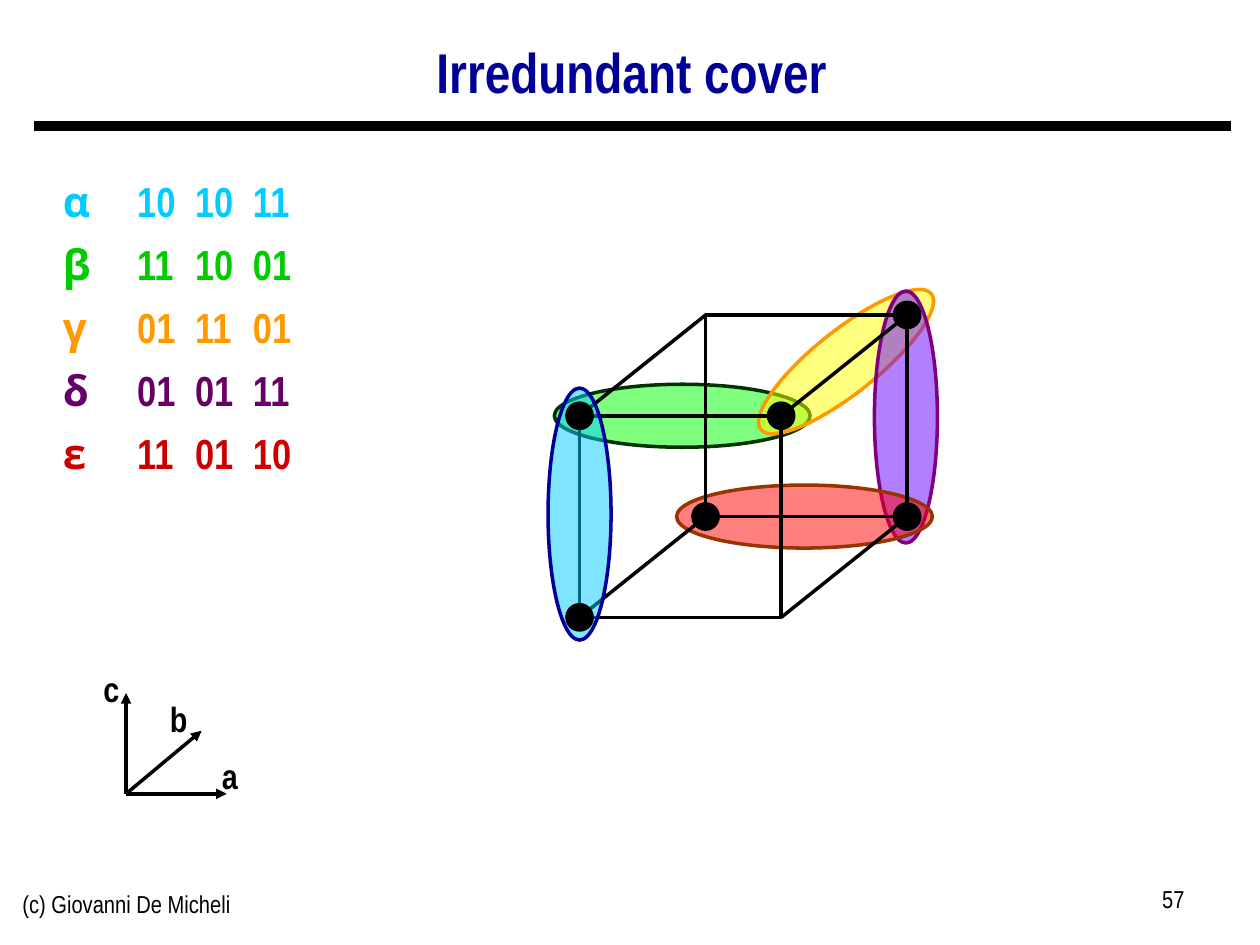
"""Build a slide showing an irredundant cover on a Boolean cube."""
from lxml.etree import SubElement
from pptx import Presentation
from pptx.dml.color import RGBColor
from pptx.enum.shapes import MSO_CONNECTOR, MSO_SHAPE
from pptx.enum.text import MSO_ANCHOR, PP_ALIGN
from pptx.oxml.ns import qn
from pptx.util import Inches, Pt

deck = Presentation()
deck.slide_width, deck.slide_height = Inches(10), Inches(7.5)
slide = deck.slides.add_slide(deck.slide_layouts[6])
shapes = slide.shapes
rgb = RGBColor.from_string


def add_text(box, runs, size, color, bold=False, align=PP_ALIGN.LEFT, wrap=True):
    frame = shapes.add_textbox(*[Inches(v) for v in box]).text_frame
    frame.word_wrap = wrap
    paragraph = frame.paragraphs[0]
    paragraph.alignment = align
    for text, face in runs:
        run = paragraph.add_run()
        run.text = text
        run.font.name = face
        run.font.size = Pt(size)
        run.font.bold = bold
        run.font.color.rgb = rgb(color)
    return frame


def add_line(start, end, width=2, arrow=False):
    line = shapes.add_connector(MSO_CONNECTOR.STRAIGHT, *[Inches(v) for v in start + end])
    line.line.color.rgb = rgb("000000")
    line.line.width = Pt(width)
    if arrow:
        SubElement(line.line._get_or_add_ln(), qn("a:tailEnd"), type="triangle")
    SubElement(line._element.spPr, qn("a:effectLst"))


add_line((0.27, 1), (9.77, 1), 6)
add_text((0.08, 7.01, 3.17, 0.52), [("(c) Giovanni De Micheli", "Arial Narrow")], 14, "000000")
add_text((7.17, 6.97, 2.33, 0.52), [("57", "Arial Narrow")], 14, "000000", align=PP_ALIGN.RIGHT)
title = add_text((0.26, 0.22, 9.51, 0.75), [("Irredundant cover", "Arial Narrow")], 32, "000099",
                 True, PP_ALIGN.CENTER)
title.vertical_anchor = MSO_ANCHOR.MIDDLE
title.paragraphs[0].line_spacing = 0.9

outlines = [
    (MSO_SHAPE.OVAL, 4.4, 3.05, 2.03, 0.5, 0, "00FF00", "003300"),
    (MSO_SHAPE.OVAL, 5.85, 2.62, 1.73, 0.5, 321.5, "FFFF00", "FF9900"),
    (MSO_SHAPE.OVAL, 6.19, 3.06, 2, 0.5, 270, "6600FF", "800080"),
    (MSO_SHAPE.OVAL, 5.37, 3.85, 2.03, 0.5, 0, "FF0000", "993300"),
    (MSO_SHAPE.RECTANGLE, 4.6, 3.3, 1.6, 1.6, 0, None, "000000"),
    (MSO_SHAPE.RECTANGLE, 5.6, 2.5, 1.6, 1.6, 0, None, "000000"),
    (MSO_SHAPE.OVAL, 3.6, 3.83, 2, 0.5, 270, "00CCFF", "000099"),
]
for kind, left, top, width, height, angle, fill, edge in outlines:
    outline = shapes.add_shape(kind, Inches(left), Inches(top), Inches(width), Inches(height))
    outline.shadow.inherit = False
    outline.rotation = angle
    outline.line.color.rgb = rgb(edge)
    outline.line.width = Pt(2)
    if fill:
        outline.fill.solid()
        outline.fill.fore_color.rgb = rgb(fill)
        tint = outline._element.spPr.find(qn("a:solidFill")).find(qn("a:srgbClr"))
        SubElement(tint, qn("a:alpha"), val="50000")
    else:
        outline.fill.background()
    if (left, top) == (5.6, 2.5):
        for x in (4.6, 6.2):
            for y in (3.3, 4.9):
                add_line((x, y), (x + 1, y - 0.8))

for tip in [(1.8, 6.3), (1, 5.5), (1.6, 5.8)]:
    add_line((1, 6.3), tip, arrow=True)
for axis, left, top in [("b", 1.25, 5.49), ("a", 1.66, 5.94), ("c", 0.72, 5.25)]:
    add_text((left, top, 0.33, 0.43), [(axis, "Arial Narrow")], 20, "000000", True,
             PP_ALIGN.CENTER, False)

for x, y in [(4.6, 3.3), (4.6, 4.9), (5.6, 4.1), (7.2, 2.5), (6.2, 3.3), (7.2, 4.1)]:
    minterm = shapes.add_shape(MSO_SHAPE.OVAL, Inches(x - 0.1), Inches(y - 0.1),
                               Inches(0.2), Inches(0.2))
    minterm.shadow.inherit = False
    minterm.fill.solid()
    minterm.fill.fore_color.rgb = rgb("000000")
    minterm.line.color.rgb = rgb("000000")
    minterm.line.width = Pt(2)

implicants = [
    ("α", "10 10 11", "00CCFF"),
    ("β", "11 10 01", "00CC00"),
    ("γ", "01 11 01", "FF9900"),
    ("δ", "01 01 11", "660066"),
    ("ε", "11 01 10", "CC0000"),
]
for row, (symbol, cube, color) in enumerate(implicants):
    codes = "".join("\t" + field for field in cube.split())
    implicant = add_text((0.4, 1.34 + 0.5 * row, 2.04, 0.5),
                         [(symbol, "Open Sans"), (codes, "Arial Narrow")], 24, color, True)
    stops = SubElement(implicant.paragraphs[0]._p.get_or_add_pPr(), qn("a:tabLst"))
    for column in range(3):
        SubElement(stops, qn("a:tab"), pos=str(Inches(0.59 + 0.46 * column)), algn="l")

deck.save("out.pptx")
